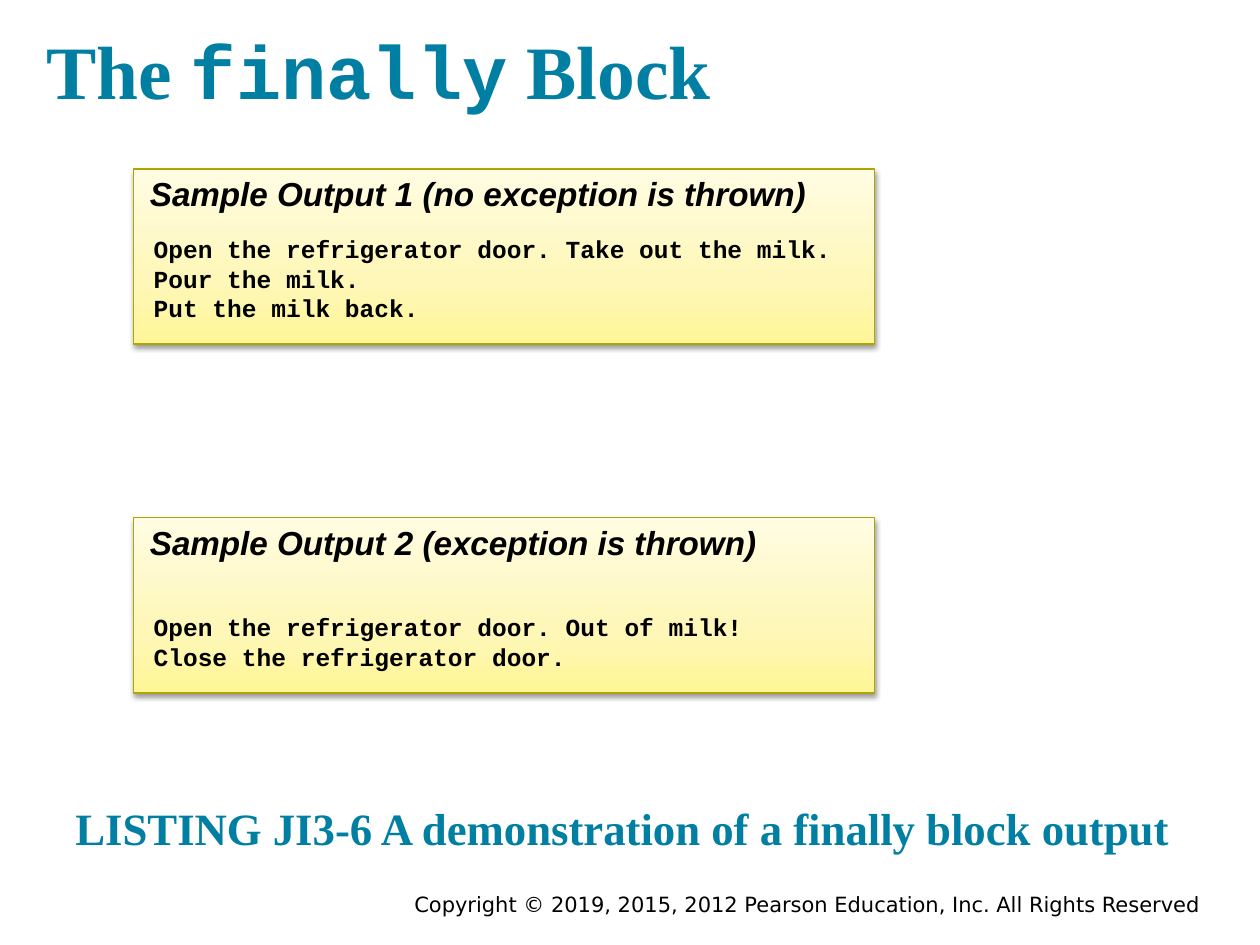
from lxml import etree
from pptx import Presentation, util as u
from pptx.dml import color
from pptx.enum import shapes, text
from pptx.oxml import ns

WIDTH, HEIGHT = 10, 7.5
TEAL, BLACK, OLIVE = "007FA3", "000000", "AEA600"
GRADIENT = [(0, "FFF698"), (35, "FEF7B7"), (100, "FFFCE3")]
CARD_LEFT, CARD_WIDTH, CARD_HEIGHT = 1.06, 5.88, 1.39
FIRST_CARD_TOP, CARD_PITCH = 1.34, 2.77
SAMPLES = [
    ("Sample Output 1 (no exception is thrown)", 0.47,
     ["Open the refrigerator door. Take out the milk.", "Pour the milk.", "Put the milk back."]),
    ("Sample Output 2 (exception is thrown)", 0.7,
     ["Open the refrigerator door. Out of milk!", "Close the refrigerator door."]),
]


def rgb(value):
    """Return the colour for a hex string."""
    return color.RGBColor.from_string(value)


def inches(*lengths):
    """Convert lengths in inches to slide units."""
    return [u.Inches(length) for length in lengths]


def style(font, name, size, fill, bold=False, italic=False):
    """Set typeface, size, colour and weight of a font."""
    font.name, font.size = name, u.Pt(size)
    font.bold, font.italic = bold, italic
    font.color.rgb = rgb(fill)


def add_text(slide, box, lines, font, inset=0.05, anchor=text.MSO_ANCHOR.TOP,
             align=text.PP_ALIGN.LEFT):
    """Add a text box with one paragraph per line and return its frame."""
    frame = slide.shapes.add_textbox(*inches(*box)).text_frame
    frame.word_wrap = True
    frame.vertical_anchor = anchor
    frame.margin_left = frame.margin_right = u.Inches(inset)
    frame.margin_top = frame.margin_bottom = u.Inches(inset)
    for index, line in enumerate(lines):
        paragraph = frame.paragraphs[0] if index == 0 else frame.add_paragraph()
        paragraph.text = line
        paragraph.alignment = align
        style(paragraph.font, *font)
    return frame


def add_title(slide):
    """Add the title, with its keyword in a monospaced face."""
    frame = add_text(slide, (0.27, 0.09, 9.31, 0.92), [""],
                     ("Times New Roman", 43.1, TEAL, True), 0.1, text.MSO_ANCHOR.BOTTOM)
    for words, name in [("The ", "Times New Roman"), ("finally", "Courier New"),
                        (" Block", "Times New Roman")]:
        run = frame.paragraphs[0].add_run()
        run.text = words
        style(run.font, name, 43.1, TEAL, True)


def add_card(slide, top):
    """Add a yellow gradient rectangle with a soft shadow below it."""
    card = slide.shapes.add_shape(shapes.MSO_SHAPE.RECTANGLE,
                                  *inches(CARD_LEFT, top, CARD_WIDTH, CARD_HEIGHT))
    card.shadow.inherit = False
    card.line.color.rgb = rgb(OLIVE)
    card.line.width = u.Pt(0.75)
    card.fill.gradient()
    properties = card.fill._xPr
    stops = properties.find(".//" + ns.qn("a:gsLst"))
    for stop in list(stops):
        stops.remove(stop)
    for position, fill in GRADIENT:
        stop = etree.SubElement(stops, ns.qn("a:gs"), pos=str(position * 1000))
        etree.SubElement(stop, ns.qn("a:srgbClr"), val=fill)
    properties.find(".//" + ns.qn("a:lin")).set("ang", str(270 * 60000))
    effects = properties.find(ns.qn("a:effectLst"))
    shadow = etree.SubElement(effects, ns.qn("a:outerShdw"), blurRad=str(u.Pt(3)),
                              dist=str(u.Pt(1.6)), dir=str(90 * 60000), rotWithShape="0")
    tint = etree.SubElement(shadow, ns.qn("a:srgbClr"), val=BLACK)
    etree.SubElement(tint, ns.qn("a:alpha"), val="38000")


def add_sample(slide, top, heading, offset, output):
    """Add a card with its heading and program output."""
    add_card(slide, top)
    add_text(slide, (1.14, top - 0.01, 5.7, 0.4), [heading],
             ("Arial", 19, BLACK, True, True))
    add_text(slide, (1.17, top + offset, 5.7, 0.1 + 0.22 * len(output)), output,
             ("Courier New", 14, BLACK, True))


def main():
    """Build the slide and save it."""
    presentation = Presentation()
    presentation.slide_width, presentation.slide_height = inches(WIDTH, HEIGHT)
    slide = presentation.slides.add_slide(presentation.slide_layouts[6])
    add_text(slide, (1.75, 7.03, 7.83, 0.31),
             ["Copyright © 2019, 2015, 2012 Pearson Education, Inc. All Rights Reserved"],
             ("DejaVu Sans", 12, BLACK), align=text.PP_ALIGN.RIGHT)
    add_title(slide)
    add_text(slide, (0.5, 6.24, 9, 0.64),
             ["LISTING JI3-6 A demonstration of a finally block output"],
             ("Times New Roman", 25.6, TEAL, True), 0.1, text.MSO_ANCHOR.BOTTOM)
    for row, sample in enumerate(SAMPLES):
        add_sample(slide, FIRST_CARD_TOP + row * CARD_PITCH, *sample)
    presentation.save("out.pptx")


if __name__ == "__main__":
    main()
